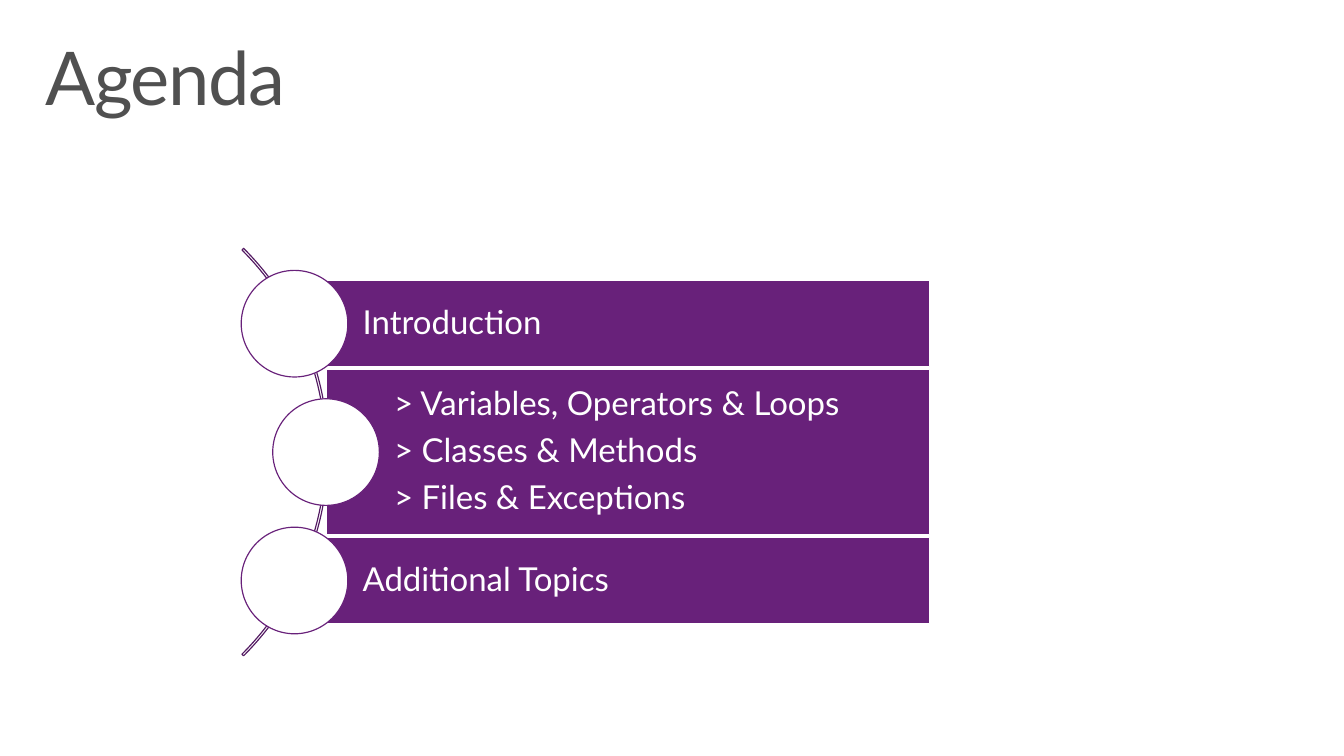
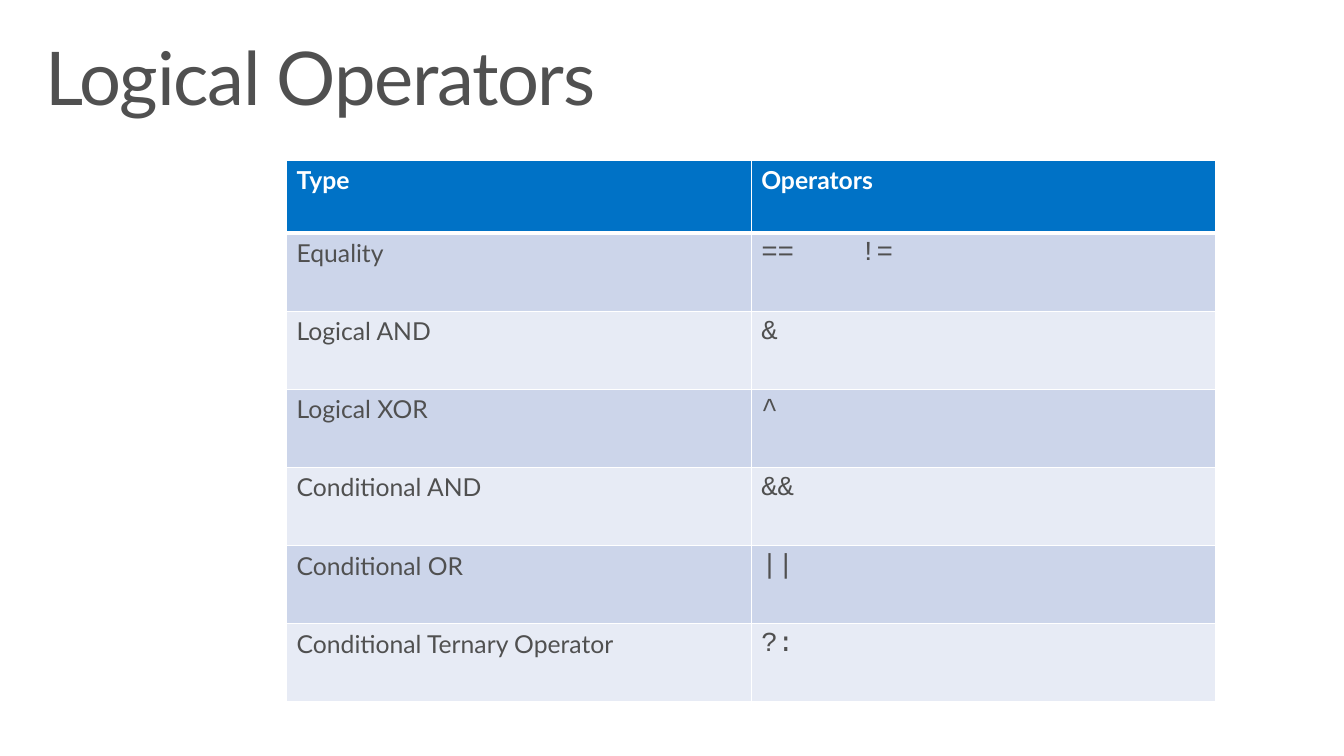
from dataclasses import dataclass

from lxml import etree
from pptx import Presentation
from pptx.dml.color import RGBColor
from pptx.enum.shapes import MSO_SHAPE
from pptx.enum.text import MSO_ANCHOR, MSO_AUTO_SIZE, PP_ALIGN
from pptx.oxml.ns import qn
from pptx.util import Cm, Pt

RECTANGLE, OVAL, BLOCK_ARC = MSO_SHAPE.RECTANGLE, MSO_SHAPE.OVAL, MSO_SHAPE.BLOCK_ARC
TOP, MIDDLE = MSO_ANCHOR.TOP, MSO_ANCHOR.MIDDLE
NO_AUTOFIT = MSO_AUTO_SIZE.NONE
LEFT = PP_ALIGN.LEFT
TITLE_ONLY = 5


@dataclass(frozen=True)
class Theme:
    """Colours, fonts and type sizes of the presentation."""

    white: str = "FFFFFF"
    ink: str = "505050"
    purple: str = "68217A"
    dark_purple: str = "531A62"
    header: str = "0072C6"
    bands: tuple = ("CCD5EA", "E7EBF5")
    font: str = "Lato"
    code_font: str = "Courier New"
    title_size: float = 54
    agenda_size: float = 24
    table_size: float = 18
    code_size: float = 20
    outline: float = 0.85
    line_spacing: float = 0.9


class Deck:
    """Holds the style and the current slide, and adds elements to it."""

    def __init__(self, presentation, theme):
        """Set the slide size and keep the theme."""
        self.presentation = presentation
        self.theme = theme
        self.slide = None
        presentation.slide_width, presentation.slide_height = Cm(34.54), Cm(19.43)

    def style_text(self, paragraph, size, color, font=None, bold=False):
        """Format every run of a paragraph."""
        paragraph.alignment = LEFT
        for run in paragraph.runs:
            run.font.name = font or self.theme.font
            run.font.size = Pt(size)
            run.font.bold = bold
            run.font.color.rgb = RGBColor.from_string(color)

    def add_slide(self, text):
        """Start a slide with its title."""
        layout = self.presentation.slide_layouts[TITLE_ONLY]
        self.slide = self.presentation.slides.add_slide(layout)
        title = self.slide.shapes.title
        title.left, title.top, title.width, title.height = Cm(0.76), Cm(0.81), Cm(33.02), Cm(2.54)
        frame = title.text_frame
        frame.text = text
        frame.word_wrap = True
        frame.auto_size = NO_AUTOFIT
        frame.vertical_anchor = TOP
        frame.margin_left = frame.margin_right = Cm(0.41)
        frame.margin_top = frame.margin_bottom = Cm(0.25)
        paragraph = frame.paragraphs[0]
        paragraph.line_spacing = self.theme.line_spacing
        self.style_text(paragraph, self.theme.title_size, self.theme.ink)
        paragraph.runs[0]._r.get_or_add_rPr().set("spc", "-100")

    def add_shape(self, kind, left, top, width, height, fill, line):
        """Add an outlined preset shape, unfilled when fill is None."""
        shape = self.slide.shapes.add_shape(kind, Cm(left), Cm(top), Cm(width), Cm(height))
        shape.shadow.inherit = False
        if fill:
            shape.fill.solid()
            shape.fill.fore_color.rgb = RGBColor.from_string(fill)
        else:
            shape.fill.background()
        shape.line.color.rgb = RGBColor.from_string(line)
        shape.line.width = Pt(self.theme.outline)
        return shape

    def add_arc(self, left, center_y, diameter):
        """Add the thin arc that links the agenda items."""
        top = center_y - diameter / 2
        arc = self.add_shape(BLOCK_ARC, left, top, diameter, diameter, None, self.theme.dark_purple)
        for index, value in enumerate((189, 27, 0.004)):
            arc.adjustments[index] = value

    def add_agenda_item(self, lines, left, right, center_y, height, diameter):
        """Add a text bar with a circle centred on its left edge."""
        theme = self.theme
        bar = self.add_shape(RECTANGLE, left, center_y - height / 2, right - left, height,
                             theme.purple, theme.white)
        frame = bar.text_frame
        frame.text = "\n".join(lines)
        frame.word_wrap = True
        frame.vertical_anchor = MIDDLE
        frame.margin_left = Cm(1.75)
        frame.margin_top = frame.margin_right = frame.margin_bottom = Cm(0.18)
        for paragraph in frame.paragraphs:
            paragraph.line_spacing = theme.line_spacing
            paragraph.space_after = Pt(0.35 * theme.agenda_size)
            self.style_text(paragraph, theme.agenda_size, theme.white)
        self.add_shape(OVAL, left - diameter / 2, center_y - diameter / 2, diameter, diameter,
                       theme.white, theme.purple)

    def set_borders(self, cell, **widths):
        """Draw the cell borders in white, with widths in points by side."""
        properties = cell._tc.get_or_add_tcPr()
        for index, (side, width) in enumerate(widths.items()):
            border = etree.Element(qn(f"a:ln{side}"), w=str(Pt(width)))
            fill = etree.SubElement(border, qn("a:solidFill"))
            etree.SubElement(fill, qn("a:srgbClr"), val=self.theme.white)
            properties.insert(index, border)

    def set_tab_stop(self, paragraph, position):
        """Give a paragraph one left tab stop."""
        tabs = etree.SubElement(paragraph._p.get_or_add_pPr(), qn("a:tabLst"))
        etree.SubElement(tabs, qn("a:tab"), pos=str(Cm(position)), algn="l")

    def add_table(self, rows, left, top, column_width, header_height, row_height):
        """Add a banded table whose last column holds code."""
        theme = self.theme
        columns = len(rows[0])
        height = header_height + row_height * (len(rows) - 1)
        table = self.slide.shapes.add_table(len(rows), columns, Cm(left), Cm(top),
                                            Cm(column_width * columns), Cm(height)).table
        for column in table.columns:
            column.width = Cm(column_width)
        for row_index, values in enumerate(rows):
            is_header = row_index == 0
            table.rows[row_index].height = Cm(header_height if is_header else row_height)
            for column_index, value in enumerate(values):
                cell = table.cell(row_index, column_index)
                cell.text = value
                cell.fill.solid()
                fill = theme.header if is_header else theme.bands[(row_index - 1) % 2]
                cell.fill.fore_color.rgb = RGBColor.from_string(fill)
                self.set_borders(cell, L=1, R=1, T=3 if row_index == 1 else 1,
                                 B=3 if is_header else 1)
                paragraph = cell.text_frame.paragraphs[0]
                if is_header:
                    self.style_text(paragraph, theme.table_size, theme.white, bold=True)
                elif column_index == columns - 1:
                    self.style_text(paragraph, theme.code_size, theme.ink, theme.code_font)
                else:
                    self.style_text(paragraph, theme.table_size, theme.ink)
                if "\t" in value:
                    self.set_tab_stop(paragraph, 2.54)


def build_agenda(deck):
    """Build the agenda slide."""
    deck.add_slide("Agenda")
    center_y, pitch = 11.62, 3.3
    items = [
        (["Introduction"], 7.57, 2.21),
        (["> Variables, Operators & Loops", "> Classes & Methods", "> Files & Exceptions"], 8.38, 4.24),
        (["Additional Topics"], 7.57, 2.21),
    ]
    deck.add_arc(-6.38, center_y, 14.81)
    for index, (lines, left, height) in enumerate(items):
        deck.add_agenda_item(lines, left, 23.89, center_y + (index - 1) * pitch, height, 2.74)


def build_operators(deck):
    """Build the slide with the table of operators."""
    deck.add_slide("Logical Operators")
    rows = [
        ("Type", "Operators"),
        ("Equality", "==\t!="),
        ("Logical AND", "&"),
        ("Logical XOR", "^"),
        ("Conditional AND", "&&"),
        ("Conditional OR", "||"),
        ("Conditional Ternary Operator", "?:"),
    ]
    deck.add_table(rows, 7.37, 4.11, 11.94, 1.88, 2.01)


def main():
    """Build and save the presentation."""
    presentation = Presentation()
    deck = Deck(presentation, Theme())
    build_agenda(deck)
    build_operators(deck)
    presentation.save("out.pptx")


if __name__ == "__main__":
    main()
